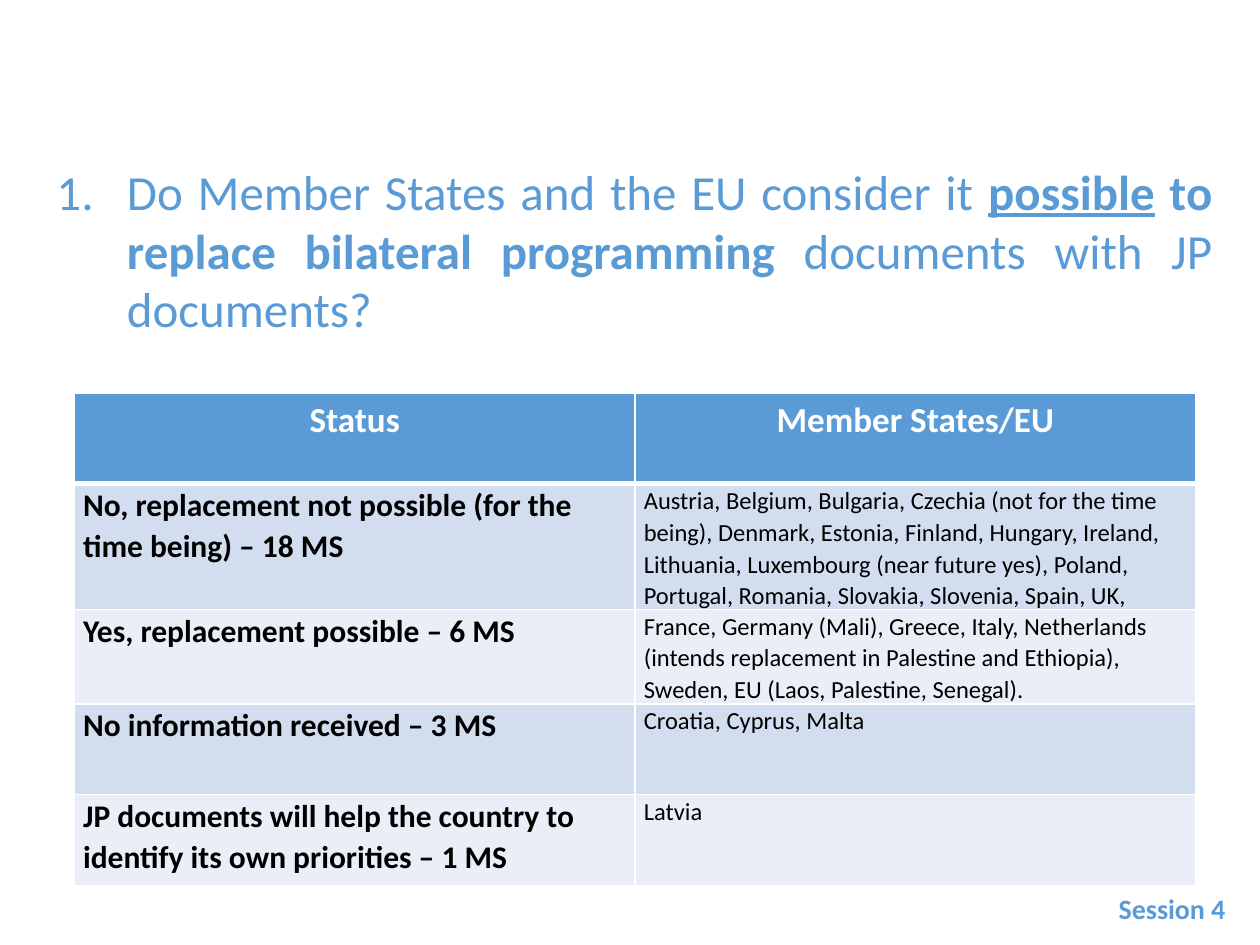
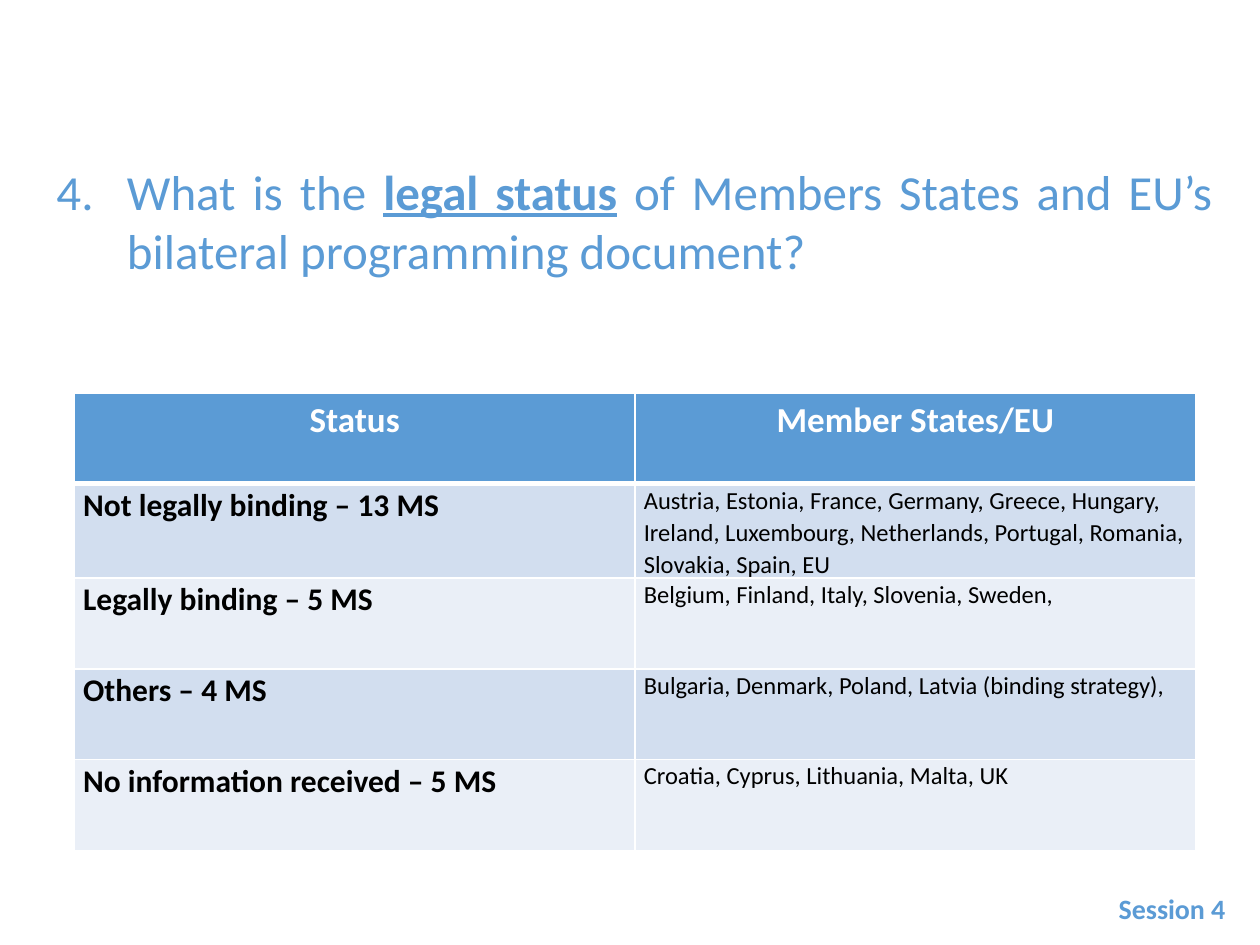
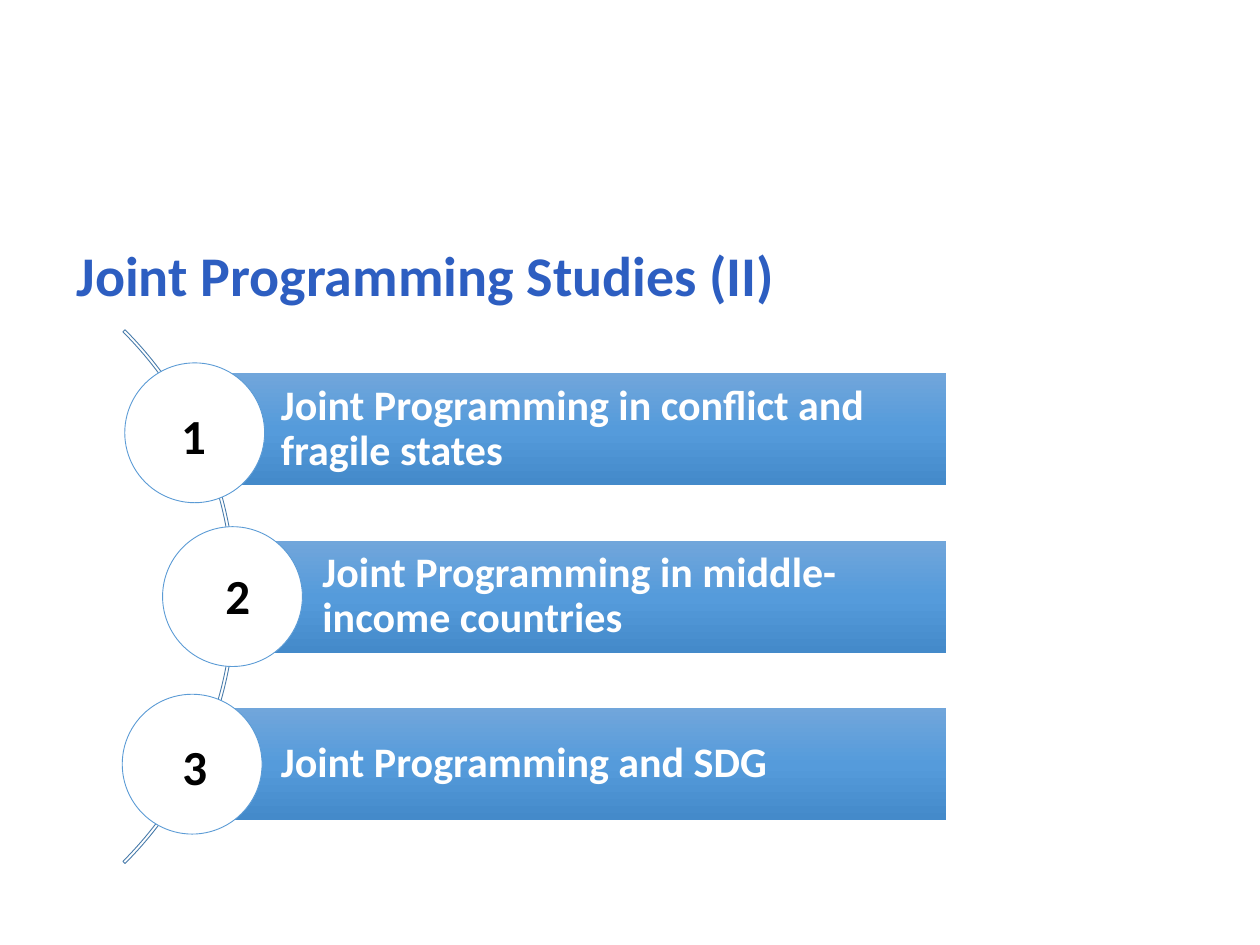
from copy import deepcopy

from lxml import etree
from pptx import Presentation
from pptx import util as u
from pptx.dml import color
from pptx.enum import shapes, text
from pptx.oxml import ns

BLUE, TITLE_BLUE, ARC_BLUE = "5B9BD5", "2D5EC1", "497CAB"
WHITE, BLACK = "FFFFFF", "000000"
BANDS = ("D2DEEF", "EAEFF7")
BAR_GRADIENT = ((0, "71A6DB"), (0.5, "559BDB"), (1, "448ACA"))

QUESTION = {"size": 28, "color": BLUE}
STRONG = {**QUESTION, "bold": True}
KEYWORD = {**STRONG, "underline": True}
HEADER = {"size": 20, "color": WHITE, "bold": True}
STATUS = {"size": 18, "color": BLACK, "bold": True}
STATES = {"size": 14, "color": BLACK, "bold": False}
SESSION = {"size": 16, "color": BLUE, "bold": True}
TITLE = {"size": 32, "color": TITLE_BLUE, "bold": True}
STUDY = {"size": 24, "color": WHITE, "bold": True}
NUMBER = {"size": 28, "color": BLACK, "bold": True}

QUESTION_BOX = (0.35, 1.23, 9.37, 5.98)
TABLE_BOX = (0.59, 3.12, 8.9, 3.6)
SESSION_BOX = (8.78, 7.03, 1.42, 0.37)
TITLE_BOX = (0.51, 1.7, 9, 1.02)
STUDIES_BOX = (0.97, 2.88, 6.54, 3.74)

LEFT, CENTER, JUSTIFY = (text.PP_ALIGN.LEFT, text.PP_ALIGN.CENTER,
                         text.PP_ALIGN.JUSTIFY)
MIDDLE = text.MSO_ANCHOR.MIDDLE


def rgb(hex_value):
    return color.RGBColor.from_string(hex_value)


def inches(*values):
    return [u.Inches(value) for value in values]


def set_all(target, values):
    for name, value in values.items():
        setattr(target, name, value)


def write(frame, runs, align=LEFT, paragraph_format=None, frame_format=None):
    """Fill the first paragraph with (words, style) runs."""
    set_all(frame, {"word_wrap": True, **(frame_format or {})})
    paragraph = frame.paragraphs[0]
    set_all(paragraph, {"alignment": align, **(paragraph_format or {})})
    for words, style in runs:
        run = paragraph.add_run()
        run.text = words
        set_all(run.font, {"name": "Calibri", "size": u.Pt(style["size"]),
                           "bold": style.get("bold", False),
                           "underline": style.get("underline", False)})
        run.font.color.rgb = rgb(style["color"])
    return paragraph


def add_text(slide, box, runs, **formats):
    frame = slide.shapes.add_textbox(*inches(*box)).text_frame
    return write(frame, runs, **formats)


def add_outline(slide, kind, box, line=None):
    shape = slide.shapes.add_shape(kind, *inches(*box))
    shape.shadow.inherit = False
    if line:
        shape.line.color.rgb = rgb(line)
        shape.line.width = u.Pt(0.5)
    else:
        shape.line.fill.background()
    return shape


def add_question(slide, box, number, runs):
    paragraph = add_text(slide, box, runs, align=JUSTIFY,
                         paragraph_format={"space_before": u.Pt(7.5)})
    # Automatic number with a hanging indent
    properties = paragraph._p.get_or_add_pPr()
    indent = u.Inches(0.56)
    properties.set("marL", str(indent))
    properties.set("indent", str(-indent))
    etree.SubElement(properties, ns.qn("a:buAutoNum"),
                     type="arabicPeriod", startAt=str(number))


def set_borders(cell, top=1, bottom=1):
    properties = cell._tc.get_or_add_tcPr()
    sides = (("L", 1), ("R", 1), ("T", top), ("B", bottom))
    for position, (side, points) in enumerate(sides):
        line = etree.Element(ns.qn(f"a:ln{side}"), w=str(u.Pt(points)))
        solid = etree.SubElement(line, ns.qn("a:solidFill"))
        etree.SubElement(solid, ns.qn("a:srgbClr"), val=WHITE)
        properties.insert(position, line)


def fill_cell(cell, fill, words, style, **formats):
    cell.fill.solid()
    cell.fill.fore_color.rgb = rgb(fill)
    write(cell.text_frame, [(words, style)], **formats)


def add_status_table(slide, box, answers):
    rows = [("Status", "Member States/EU"), *answers]
    table = slide.shapes.add_table(len(rows), 2, *inches(*box)).table
    table.horz_banding = False
    side, none = inches(0.07, 0)
    margins = {"margin_left": side, "margin_right": side,
               "margin_top": none, "margin_bottom": none}
    for r, row in enumerate(rows):
        for c, words in enumerate(row):
            cell = table.cell(r, c)
            if r == 0:
                fill_cell(cell, BLUE, words, HEADER, align=CENTER)
                set_borders(cell, bottom=3)
            else:
                set_all(cell, margins)
                fill_cell(cell, BANDS[(r - 1) % 2], words, (STATUS, STATES)[c],
                          paragraph_format={"line_spacing": 1.07})
                set_borders(cell, top=3 if r == 1 else 1)


def question_slide(deck, number, question, answers):
    slide = deck.slides.add_slide(deck.slide_layouts[6])
    add_question(slide, QUESTION_BOX, number, question)
    add_status_table(slide, TABLE_BOX, answers)
    add_text(slide, SESSION_BOX, [("Session 4", SESSION)])


def add_study_bar(slide, box, words):
    bar = add_outline(slide, shapes.MSO_SHAPE.RECTANGLE, box)
    bar.fill.gradient()
    bar.fill.gradient_angle = 270
    # A third stop for the middle of the gradient
    stops = bar.element.spPr.find(ns.qn("a:gradFill")).find(ns.qn("a:gsLst"))
    stops.insert(1, deepcopy(stops[0]))
    for stop, (position, shade) in zip(bar.fill.gradient_stops, BAR_GRADIENT):
        stop.position = position
        stop.color.rgb = rgb(shade)
    wide, narrow = inches(0.71, 0.07)
    write(bar.text_frame, [(words, STUDY)],
          paragraph_format={"line_spacing": 0.9},
          frame_format={"vertical_anchor": MIDDLE, "margin_left": wide,
                        "margin_right": narrow, "margin_top": narrow,
                        "margin_bottom": narrow})


def add_studies(slide, box, studies):
    left, top, width, height = box
    circle, bar_height, pitch = 1.11, 0.89, 1.33
    # Curved guide behind the steps
    arc_size = 5.99
    arc = add_outline(slide, shapes.MSO_SHAPE.BLOCK_ARC,
                      (left - 5.09, top - 1.14, arc_size, arc_size), ARC_BLUE)
    arc.fill.background()
    for index, value in enumerate((189, 27, 0.004)):
        arc.adjustments[index] = value
    # Bars, then the circles that overlap their left ends
    for step, (words, bar_x, circle_x, circle_y) in enumerate(studies):
        add_study_bar(slide, (left + bar_x, top + 0.08 + step * pitch,
                              width - bar_x, bar_height), words)
        disc = add_outline(slide, shapes.MSO_SHAPE.OVAL,
                           (left + circle_x, top + circle_y, circle, circle),
                           BLUE)
        disc.fill.solid()
        disc.fill.fore_color.rgb = rgb(WHITE)
    # Step numbers
    numbers = ((0.17, 0.29, 0.79, CENTER), (0.72, 1.56, 0.47, LEFT),
               (0.38, 2.92, 0.26, LEFT))
    for number, (x, y, number_width, align) in enumerate(numbers, 1):
        add_text(slide, (left + x, top + y, number_width, 0.57),
                 [(str(number), NUMBER)], align=align)


def studies_slide(deck, title, studies):
    slide = deck.slides.add_slide(deck.slide_layouts[6])
    add_text(slide, TITLE_BOX, [(title, TITLE)],
             paragraph_format={"line_spacing": 0.9},
             frame_format={"vertical_anchor": MIDDLE})
    add_studies(slide, STUDIES_BOX, studies)


def main():
    deck = Presentation()
    deck.slide_width, deck.slide_height = inches(10, 7.5)
    question_slide(
        deck, 1,
        [("Do Member States and the EU consider it ", QUESTION),
         ("possible", KEYWORD),
         (" to replace bilateral programming", STRONG),
         (" documents with JP documents?", QUESTION)],
        [("No, replacement not possible (for the time being) – 18 MS",
          "Austria, Belgium, Bulgaria, Czechia (not for the time being), "
          "Denmark, Estonia, Finland, Hungary, Ireland, Lithuania, Luxembourg "
          "(near future yes), Poland, Portugal, Romania, Slovakia, Slovenia, "
          "Spain, UK,"),
         ("Yes, replacement possible – 6 MS",
          "France, Germany (Mali), Greece, Italy, Netherlands (intends "
          "replacement in Palestine and Ethiopia), Sweden, EU (Laos, "
          "Palestine, Senegal)."),
         ("No information received – 3 MS", "Croatia, Cyprus, Malta"),
         ("JP documents will help the country to identify its own priorities "
          "– 1 MS", "Latvia")])
    question_slide(
        deck, 4,
        [("What is the ", QUESTION),
         ("legal status", KEYWORD),
         (" of Members States and EU’s bilateral programming document?",
          QUESTION)],
        [("Not legally binding – 13 MS",
          "Austria, Estonia, France, Germany, Greece, Hungary, Ireland, "
          "Luxembourg, Netherlands, Portugal, Romania, Slovakia, Spain, EU"),
         ("Legally binding – 5 MS",
          "Belgium, Finland, Italy, Slovenia, Sweden,"),
         ("Others – 4 MS",
          "Bulgaria, Denmark, Poland, Latvia (binding strategy),"),
         ("No information received – 5 MS",
          "Croatia, Cyprus, Lithuania, Malta, UK")])
    studies_slide(
        deck, "Joint Programming Studies (II)",
        [("Joint Programming in conflict and fragile states", 0.55, 0.02, 0),
         ("Joint Programming in middle-income countries", 0.88, 0.32, 1.3),
         ("Joint Programming and SDG", 0.55, 0, 2.63)])
    deck.save("out.pptx")


if __name__ == "__main__":
    main()
